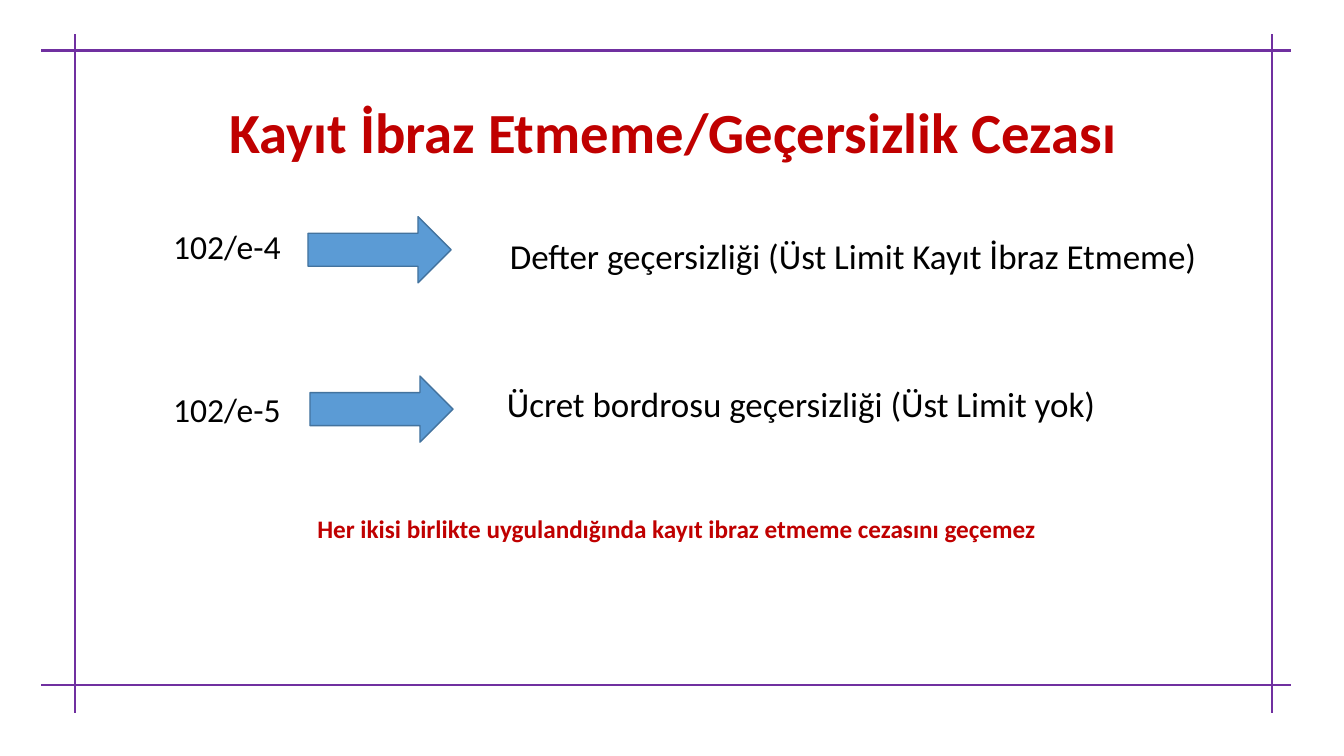
from lxml.etree import SubElement
from pptx import Presentation
from pptx.dml.color import RGBColor
from pptx.enum.shapes import MSO_CONNECTOR, MSO_SHAPE
from pptx.enum.text import MSO_ANCHOR, PP_ALIGN
from pptx.oxml.ns import qn
from pptx.util import Pt

PURPLE = RGBColor(0x70, 0x30, 0xA0)
RED = RGBColor(0xC0, 0x00, 0x00)
BLACK = RGBColor(0x00, 0x00, 0x00)
BLUE = RGBColor(0x5B, 0x9B, 0xD5)
DARK_BLUE = RGBColor(0x43, 0x73, 0x9E)

# All lengths are in points; boxes are left, top, width, height.
SLIDE_SIZE = (960, 540)
TITLE = ("Kayıt İbraz Etmeme/Geçersizlik Cezası", (146.9, 67.7, 668.2, 52.6))
NOTE = ("Her ikisi birlikte uygulandığında kayıt ibraz etmeme cezasını geçemez",
        (219.6, 362.9, 556.6, 28.8))
CODES = (["102/e-4", "102/e-5"], (116.6, 157.7, 94.3, 211))
CODE_GAP = 88
PENALTIES = [
    ("Defter geçersizliği (Üst Limit Kayıt İbraz Etmeme)",
     (357.1, 164.2, 538.6, 37.4), (220, 154.8)),
    ("Ücret bordrosu geçersizliği (Üst Limit yok)",
     (355, 270, 488.2, 37.4), (221.4, 268.6)),
]
ARROW_SIZE = (102.2, 47.2)

# Frame lines cross near the corners and run past each other.
FRAME_X = (53.3, 908.6)
FRAME_Y = (36, 489.6)
HORIZONTAL_SPAN = (29.5, 922.3)
VERTICAL_SPAN = (24.5, 509)
TOP_WEIGHT, FRAME_WEIGHT = 2.25, 1.5

TITLE_FONT = {"size": Pt(40.5), "bold": True}
NOTE_FONT = {"size": Pt(18), "bold": True}
CODE_FONT = {"size": Pt(24)}
PENALTY_FONT = {"size": Pt(25)}


def add_frame_line(slide, start, end, weight):
    line = slide.shapes.add_connector(
        MSO_CONNECTOR.STRAIGHT, *map(Pt, start + end))
    line.line.color.rgb = PURPLE
    line.line.width = Pt(weight)
    SubElement(line.element.spPr, qn("a:effectLst"))


def add_text(slide, lines, box, font_values, color=BLACK, gap=0):
    """Add a text box with one paragraph per line, spaced by gap."""
    shape = slide.shapes.add_textbox(*map(Pt, box))
    frame = shape.text_frame
    frame.word_wrap = True
    frame.text = "\n".join(lines)
    for index, paragraph in enumerate(frame.paragraphs):
        if index:
            paragraph.space_before = Pt(gap)
        paragraph.font.name = "Calibri"
        paragraph.font.color.rgb = color
        for name, value in font_values.items():
            setattr(paragraph.font, name, value)
    return frame


def add_arrow(slide, position):
    arrow = slide.shapes.add_shape(
        MSO_SHAPE.RIGHT_ARROW, *map(Pt, position + ARROW_SIZE))
    arrow.shadow.inherit = False
    arrow.fill.solid()
    arrow.fill.fore_color.rgb = BLUE
    arrow.line.color.rgb = DARK_BLUE
    arrow.line.width = Pt(1)


def main():
    presentation = Presentation()
    presentation.slide_width, presentation.slide_height = map(Pt, SLIDE_SIZE)
    slide = presentation.slides.add_slide(presentation.slide_layouts[6])

    left, right = HORIZONTAL_SPAN
    for y, weight in zip(FRAME_Y, (TOP_WEIGHT, FRAME_WEIGHT)):
        add_frame_line(slide, (left, y), (right, y), weight)
    top, bottom = VERTICAL_SPAN
    for x in FRAME_X:
        add_frame_line(slide, (x, bottom), (x, top), FRAME_WEIGHT)

    title, title_box = TITLE
    title_frame = add_text(slide, [title], title_box, TITLE_FONT, RED)
    title_frame.vertical_anchor = MSO_ANCHOR.BOTTOM
    title_frame.paragraphs[0].alignment = PP_ALIGN.CENTER
    title_frame.paragraphs[0].line_spacing = 0.7

    codes, codes_box = CODES
    add_text(slide, codes, codes_box, CODE_FONT, gap=CODE_GAP)
    for penalty, box, arrow_position in PENALTIES:
        add_arrow(slide, arrow_position)
        add_text(slide, [penalty], box, PENALTY_FONT)

    note, note_box = NOTE
    add_text(slide, [note], note_box, NOTE_FONT, RED)
    presentation.save("out.pptx")


if __name__ == "__main__":
    main()
